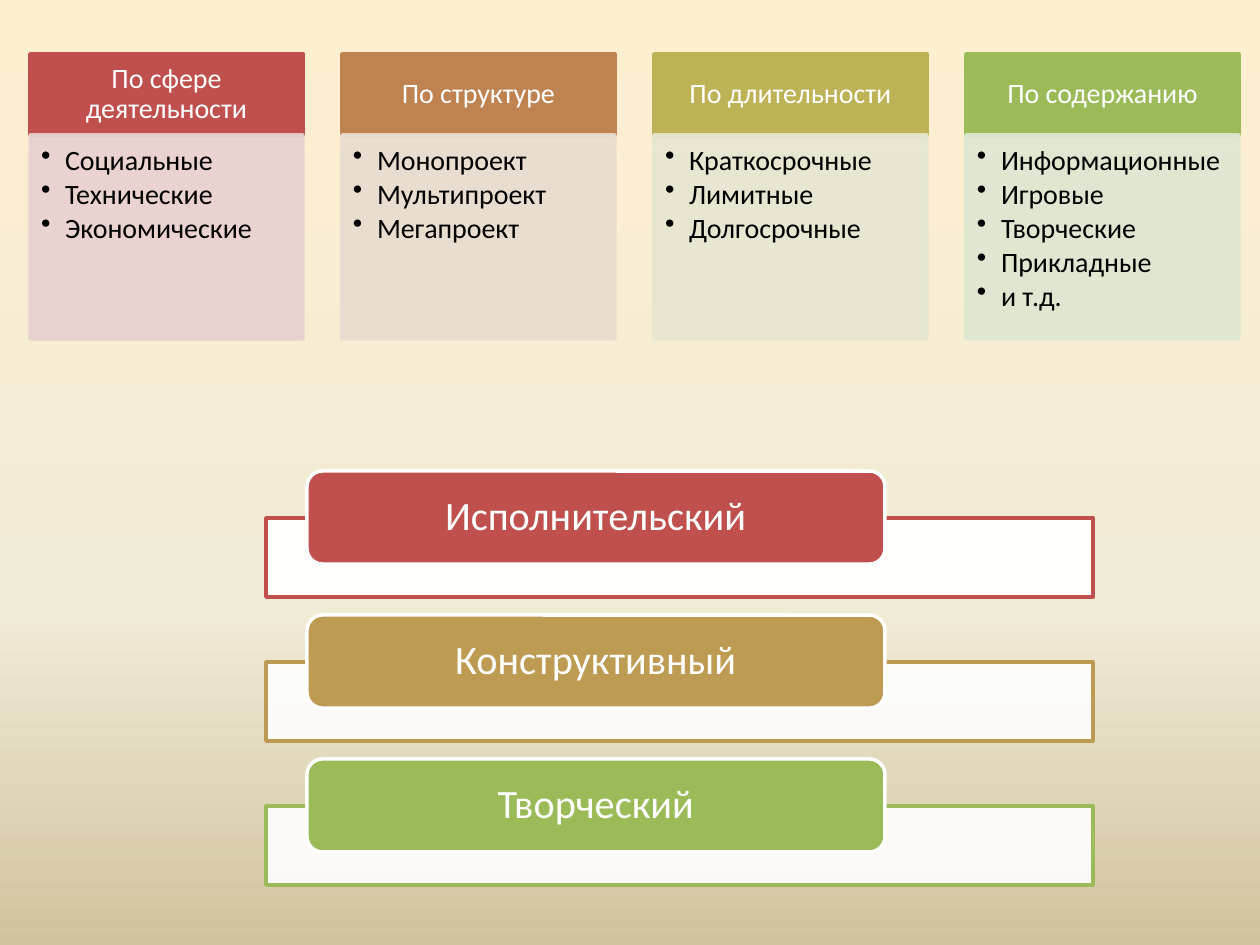
import pptx
import pptx.util
import pptx.dml.color
import pptx.enum.shapes
import pptx.enum.text
import pptx.oxml
import pptx.oxml.ns
import lxml.etree

PX = 914400 / 126
ALIGN = pptx.enum.text.PP_ALIGN
ANCHOR = pptx.enum.text.MSO_ANCHOR
SHAPE = pptx.enum.shapes.MSO_SHAPE
qn = pptx.oxml.ns.qn


def rgb(value):
    return pptx.dml.color.RGBColor.from_string(value)


def add_block(kind, area, fill, line, lines=(), size=16, color="FFFFFF", insets=(15, 9, 15, 9),
              bullets=False, opacity=100, line_opacity=100):
    """Add a filled shape; area and insets are px as left, top, width/right, height/bottom."""
    box = page.shapes.add_shape(kind, *[round(value * PX) for value in area])
    box.shadow.inherit = False
    box.fill.solid()
    box.fill.fore_color.rgb = rgb(fill)
    box.line.color.rgb = rgb(line)
    box.line.width = pptx.util.Pt(2)
    # The first srgbClr is the fill, the second the line
    for tint, percent in zip(box._element.spPr.iter(qn("a:srgbClr")), (opacity, line_opacity)):
        if percent < 100:
            lxml.etree.SubElement(tint, qn("a:alpha"), val=str(percent * 1000))

    frame = box.text_frame
    frame.word_wrap = True
    frame.vertical_anchor = ANCHOR.TOP if bullets else ANCHOR.MIDDLE
    for side, inset in zip(("left", "top", "right", "bottom"), insets):
        setattr(frame, f"margin_{side}", round(inset * PX))
    for index, text in enumerate(lines):
        para = frame.add_paragraph() if index else frame.paragraphs[0]
        layout = {"alignment": ALIGN.LEFT if bullets else ALIGN.CENTER, "line_spacing": 0.9,
                  "space_after": pptx.util.Pt(2.15 if bullets else 0), "level": int(bullets)}
        for name, value in layout.items():
            setattr(para, name, value)
        if bullets:
            props = para._p.get_or_add_pPr()
            props.set("marL", str(round(24 * PX)))
            props.set("indent", str(round(-24 * PX)))
            lxml.etree.SubElement(props, qn("a:buChar"), char="•")
        span = para.add_run()
        span.text = text
        span.font.name = "Calibri"
        span.font.size = pptx.util.Pt(size)
        span.font.color.rgb = rgb(color)
    return box


deck = pptx.Presentation()
deck.slide_width = round(1260 * PX)
deck.slide_height = round(945 * PX)
page = deck.slides.add_slide(deck.slide_layouts[6])

# Background gradient, top to bottom
backdrop = page.background.fill
backdrop.gradient()
gradient = page._element.find(".//" + qn("a:gradFill"))
stops = gradient.find(qn("a:gsLst"))
for stop in list(stops):
    stops.remove(stop)
for position, tone in ((0, "FFEFD1"), (65, "F0EBD5"), (100, "D1C39F")):
    stop = lxml.etree.SubElement(stops, qn("a:gs"), pos=str(position * 1000))
    lxml.etree.SubElement(stop, qn("a:srgbClr"), val=tone)
direction = gradient.find(qn("a:lin"))
direction.set("ang", "5400000")
direction.set("scaled", "0")

# Project classifications: a heading above a list in each column
columns = [
    ("По сфере деятельности", "C0504D", "E8D0D0",
     ["Социальные", "Технические", "Экономические"]),
    ("По структуре", "BE8351", "E8DCD0",
     ["Монопроект", "Мультипроект", "Мегапроект"]),
    ("По длительности", "BDB255", "E7E6D1",
     ["Краткосрочные", "Лимитные", "Долгосрочные"]),
    ("По содержанию", "9BBB59", "DEE7D1",
     ["Информационные", "Игровые", "Творческие", "Прикладные", "и т.д."]),
]
for number, (heading, strong, pale, items) in enumerate(columns):
    left = 30 + 312 * number
    add_block(SHAPE.RECTANGLE, (left, 54, 273, 81), strong, strong, [heading])
    add_block(SHAPE.RECTANGLE, (left, 135, 273, 204), pale, pale, items, color="000000",
              insets=(11, 11, 15, 18), bullets=True, opacity=90, line_opacity=90)

# Project levels: a rounded label over an outlined bar in each row
levels = [("Исполнительский", "C0504D"), ("Конструктивный", "BD9B53"), ("Творческий", "9BBB59")]
for number, (label, tone) in enumerate(levels):
    top = 471 + 144 * number
    add_block(SHAPE.RECTANGLE, (266, top + 47, 827, 79), "FFFFFF", tone, opacity=90)
    add_block(SHAPE.ROUNDED_RECTANGLE, (307, top, 578, 93), tone, "FFFFFF", [label],
              size=23, insets=(26, 5, 26, 5))

deck.save("out.pptx")
